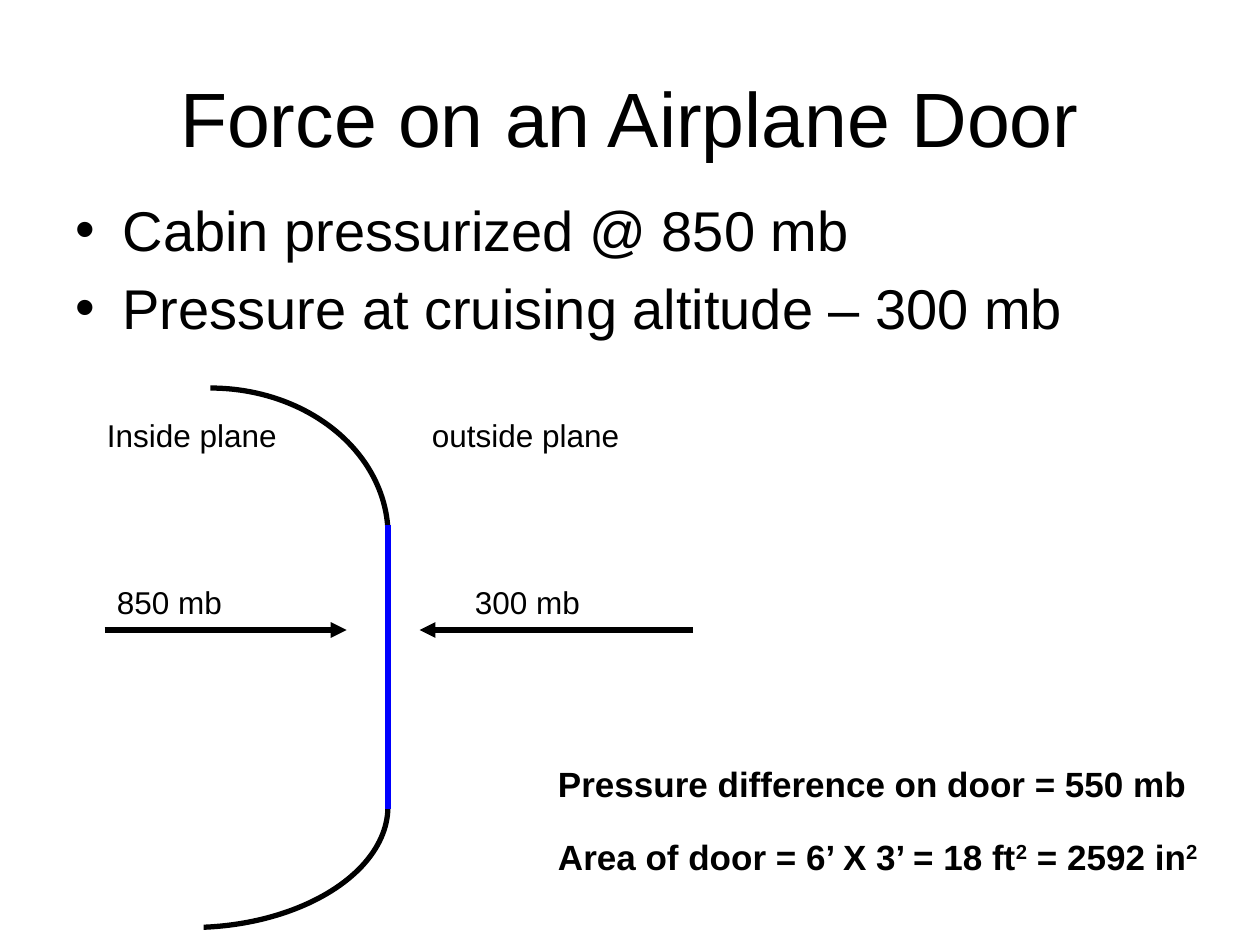
from lxml.etree import SubElement
from pptx import Presentation
from pptx.dml.color import RGBColor
from pptx.enum.shapes import MSO_CONNECTOR as CONN, MSO_SHAPE as SHAPE
from pptx.enum.text import MSO_ANCHOR as ANCHOR, PP_ALIGN as ALIGN
from pptx.oxml.ns import qn
from pptx.util import Inches, Pt

BLACK = RGBColor(0, 0, 0)
BLUE = RGBColor(0, 0, 255)
FONT = "Arial"
ARC_DEGREE = 0.6


def add_text(s, text, box, size=18, bold=False, align=ALIGN.LEFT,
             anchor=ANCHOR.TOP, bullet=False):
    sp = s.shapes.add_textbox(*map(Inches, box))
    tf = sp.text_frame
    tf.word_wrap = True
    tf.vertical_anchor = anchor
    for i, line in enumerate(text.split("\n")):
        p = tf.paragraphs[0] if i == 0 else tf.add_paragraph()
        p.alignment = align
        if bullet:
            add_bullet(p)
        for j, part in enumerate(line.split("^")):
            r = p.add_run()
            r.text = part
            r.font.name = FONT
            r.font.size = Pt(size)
            r.font.bold = bold
            r.font.color.rgb = BLACK
            if j % 2:
                r.font._element.set("baseline", "30000")
    return sp


def add_bullet(p):
    pPr = p._p.get_or_add_pPr()
    indent = Inches(0.375)
    pPr.set("marL", str(indent))
    pPr.set("indent", str(-indent))
    before = SubElement(pPr, qn("a:spcBef"))
    SubElement(before, qn("a:spcPct")).set("val", "20000")
    SubElement(pPr, qn("a:buFont")).set("typeface", FONT)
    SubElement(pPr, qn("a:buChar")).set("char", "•")


def add_line(s, start, end, color=BLACK, arrow=False):
    cx = s.shapes.add_connector(CONN.STRAIGHT, *map(Inches, (*start, *end)))
    cx.line.color.rgb = color
    cx.line.width = Pt(3)
    if arrow:
        SubElement(cx.line._get_or_add_ln(), qn("a:tailEnd")).set("type", "triangle")
    SubElement(cx._element.spPr, qn("a:effectLst"))


def add_arc(s, center, radii, start, end, rotation=0):
    (x, y), (rx, ry) = center, radii
    sp = s.shapes.add_shape(
        SHAPE.ARC, *map(Inches, (x - rx, y - ry, 2 * rx, 2 * ry)))
    sp.adjustments[0] = start * ARC_DEGREE
    sp.adjustments[1] = end * ARC_DEGREE
    sp.rotation = rotation
    sp.shadow.inherit = False
    sp.fill.background()
    sp.line.color.rgb = BLACK
    sp.line.width = Pt(3)


def add_heading(s, box):
    x, y, w, h = box
    add_text(s, "Force on an Airplane Door", (x, y, w, 1.25), size=44,
             align=ALIGN.CENTER, anchor=ANCHOR.MIDDLE)
    add_text(s, "Cabin pressurized @ 850 mb\nPressure at cruising altitude – 300 mb",
             (x, y + 1.2, w, h - 1.2), size=32, bullet=True)


def add_door_diagram(s, box):
    x, y, w, h = box
    door_x = x + 2.33
    add_arc(s, (x + 0.92, y + 1.17), (1.41, 1.17), 270, 0)
    add_arc(s, (x + 0.83, y + 3.36), (1.5, 0.92), 0, 90, rotation=357.7)
    add_line(s, (door_x, y + 3.34), (door_x, y + 1.09), color=BLUE)

    arrow_y = y + 1.92
    add_line(s, (x + 0.08, arrow_y), (x + 2, arrow_y), arrow=True)
    add_line(s, (x + w, arrow_y), (x + 2.58, arrow_y), arrow=True)

    for text, dx, dy in (("Inside plane", 0, 0.17), ("outside plane", 2.58, 0.17),
                         ("850 mb", 0.08, 1.5), ("300 mb", 2.92, 1.5)):
        add_text(s, text, (x + dx, y + dy, 1.77, 0.4))


def add_results(s, box):
    x, y, w, h = box
    lines = ("Pressure difference on door = 550 mb",
             "Area of door = 6’ X 3’ = 18 ft^2^ = 2592 in^2")
    for i, text in enumerate(lines):
        add_text(s, text, (x, y + i * 0.58, w, h - 0.58), size=20, bold=True)


def main():
    prs = Presentation()
    prs.slide_width, prs.slide_height = Inches(10), Inches(7.5)
    s = prs.slides.add_slide(prs.slide_layouts[6])
    add_heading(s, (0.5, 0.3, 9, 6.15))
    add_door_diagram(s, (0.75, 3.08, 4.75, 4.28))
    add_results(s, (4.33, 6, 5.42, 1.01))
    prs.save("out.pptx")


if __name__ == "__main__":
    main()
